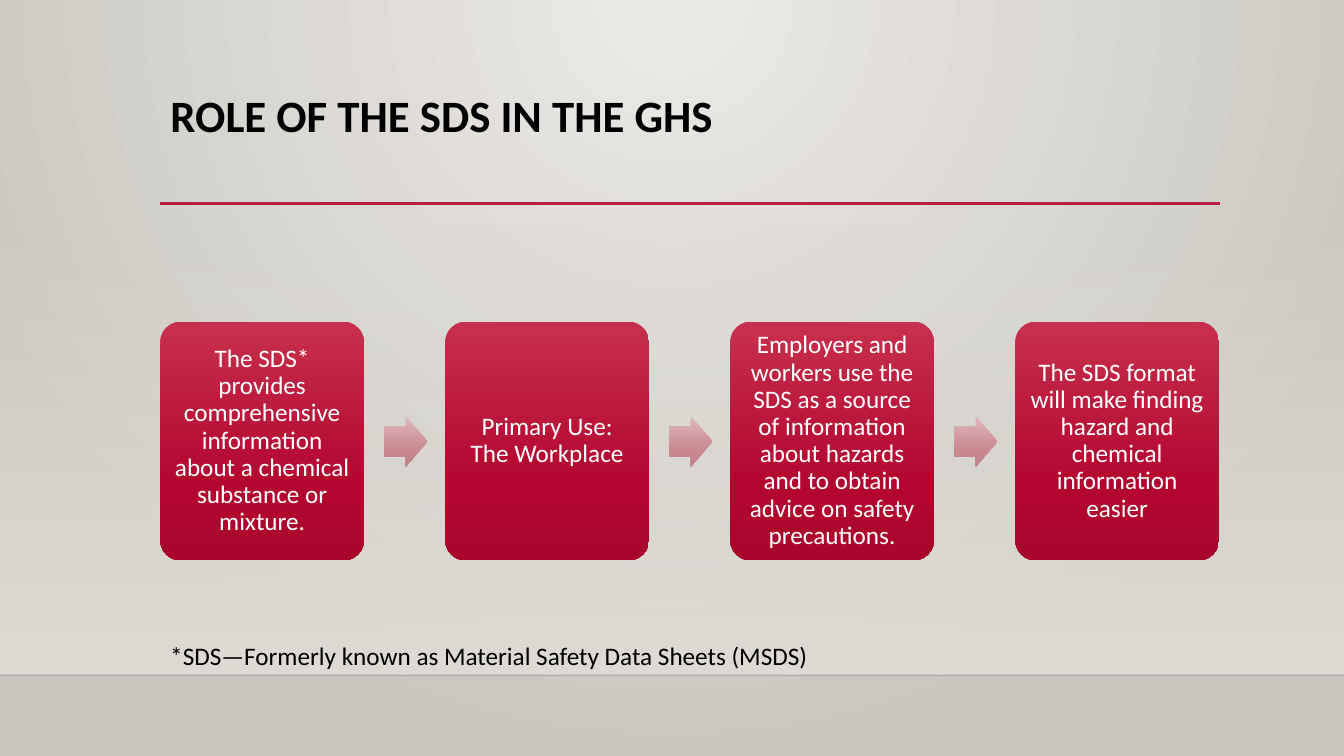
from dataclasses import dataclass
from typing import NamedTuple

from lxml.etree import SubElement
from pptx import Presentation
from pptx.dml.color import RGBColor
from pptx.enum.shapes import MSO_CONNECTOR, MSO_SHAPE
from pptx.enum.text import MSO_ANCHOR, MSO_AUTO_SIZE, PP_ALIGN
from pptx.oxml import parse_xml
from pptx.oxml.ns import nsdecls, qn
from pptx.util import Inches, Pt


class Stop(NamedTuple):
    pos: int
    color: str
    alpha: int = 100


class Box(NamedTuple):
    left: float
    top: float
    width: float
    height: float

    def lengths(self) -> list:
        return [Inches(side) for side in self]


class Rule(NamedTuple):
    left: float
    right: float
    top: float
    color: str
    weight: float
    alpha: int = 100


class Step(NamedTuple):
    lines: tuple


@dataclass(frozen=True)
class Theme:
    font: str = "Calibri"
    head: int = 32
    body: int = 18
    ink: str = "000000"
    white: str = "FFFFFF"
    red: str = "B71E42"
    edge: str = "000001"
    wall: tuple = (Stop(0, "ECEAE7"), Stop(100, "CAC7C1"))
    haze: tuple = (Stop(0, "DFDBD5", 0), Stop(100, "DFDBD5"))
    card: tuple = (Stop(0, "C7304C"), Stop(69, "B3062F"), Stop(100, "AA062C"))
    arrow: tuple = (Stop(0, "DFB7BB"), Stop(69, "C9888E"), Stop(100, "BE8288"))


THEME = Theme()
DOWN = '<a:lin ang="5400000" scaled="0"/>'
GLOW = '<a:path path="circle"><a:fillToRect l="43000" r="43000" b="100000"/></a:path>'
WIDE, HIGH = 13.33, 7.5
LEFT, SPAN = 1.59, 10.5
FLOOR = 6.7
CARD = Box(LEFT, 3.19, 2.02, 2.37)
ARROW = Box(LEFT + 2.22, 4.13, 0.43, 0.5)
STEPS = (
    Step(("The SDS* provides comprehensive information about a chemical substance or mixture.",)),
    Step(("Primary Use:", "The Workplace")),
    Step(("Employers and workers use the SDS as a source of information about hazards "
          "and to obtain advice on safety precautions.",)),
    Step(("The SDS format will make finding hazard and chemical information easier",)),
)
RULES = (
    Rule(0, WIDE, FLOOR, THEME.edge, 1, 20),
    Rule(LEFT, 12.1, 2.02, THEME.red, 2.5),
)


def blend(fill, owner, stops: tuple, shade: str) -> None:
    """Give the owner element a gradient fill."""
    fill.solid()
    marks = "".join(
        f'<a:gs pos="{stop.pos * 1000}"><a:srgbClr val="{stop.color}">'
        f'<a:alpha val="{stop.alpha * 1000}"/></a:srgbClr></a:gs>'
        for stop in stops
    )
    solid = owner.find(qn("a:solidFill"))
    owner.replace(solid, parse_xml(
        f'<a:gradFill {nsdecls("a")} rotWithShape="1"><a:gsLst>{marks}</a:gsLst>{shade}</a:gradFill>'
    ))


def add_form(slide, kind, box: Box, stops: tuple, *bends: float):
    form = slide.shapes.add_shape(kind, *box.lengths())
    form.shadow.inherit = False
    form.line.fill.background()
    for index, bend in enumerate(bends):
        form.adjustments[index] = bend
    blend(form.fill, form.element.spPr, stops, DOWN)
    return form


def add_rule(slide, rule: Rule) -> None:
    top = Inches(rule.top)
    line = slide.shapes.add_connector(
        MSO_CONNECTOR.STRAIGHT, Inches(rule.left), top, Inches(rule.right), top)
    line.line.width = Pt(rule.weight)
    line.line.color.rgb = RGBColor.from_string(rule.color)
    if rule.alpha < 100:
        color = line.element.spPr.find(".//" + qn("a:srgbClr"))
        SubElement(color, qn("a:alpha"), val=str(rule.alpha * 1000))
    SubElement(line.element.spPr, qn("a:effectLst"))


def add_text(frame, lines: tuple, size: int, color: str, align=PP_ALIGN.LEFT,
             space: float = 1.0, bold: bool = False) -> None:
    frame.word_wrap = True
    para = frame.paragraphs[0]
    para.alignment = align
    para.line_spacing = space
    for index, line in enumerate(lines):
        if index:
            para.add_line_break()
        run = para.add_run()
        run.text = line
        run.font.name = THEME.font
        run.font.size = Pt(size)
        run.font.bold = bold
        run.font.color.rgb = RGBColor.from_string(color)


def add_step(slide, step: Step, shift: float) -> None:
    card = add_form(slide, MSO_SHAPE.ROUNDED_RECTANGLE,
                    CARD._replace(left=CARD.left + shift), THEME.card, 0.1)
    frame = card.text_frame
    frame.margin_left = frame.margin_right = Inches(0.07)
    frame.margin_top = frame.margin_bottom = Inches(0.07)
    frame.vertical_anchor = MSO_ANCHOR.MIDDLE
    add_text(frame, step.lines, THEME.body, THEME.white, PP_ALIGN.CENTER, 0.9)


def main() -> None:
    deck = Presentation()
    deck.slide_width, deck.slide_height = Inches(WIDE), Inches(HIGH)
    slide = deck.slides.add_slide(deck.slide_layouts[5])

    # Backdrop and rules
    fill = slide.background.fill
    fill.solid()
    blend(fill, slide.element.find(".//" + qn("p:bgPr")), THEME.wall, GLOW)
    add_form(slide, MSO_SHAPE.RECTANGLE, Box(0, 2.21, WIDE, FLOOR - 2.21), THEME.haze)
    for rule in RULES:
        add_rule(slide, rule)

    # Title
    title = slide.shapes.title
    title.left, title.top, title.width, title.height = Box(LEFT, 0.88, SPAN, 1.15).lengths()
    title.text_frame.vertical_anchor = MSO_ANCHOR.TOP
    title.text_frame.auto_size = MSO_AUTO_SIZE.NONE
    add_text(title.text_frame, ("ROLE OF THE SDS IN THE GHS",), THEME.head, THEME.ink,
             space=0.9, bold=True)

    # Steps with arrows between them
    pitch = (SPAN - CARD.width) / (len(STEPS) - 1)
    for index, step in enumerate(STEPS):
        shift = index * pitch
        add_step(slide, step, shift)
        if index < len(STEPS) - 1:
            add_form(slide, MSO_SHAPE.RIGHT_ARROW,
                     ARROW._replace(left=ARROW.left + shift), THEME.arrow, 0.6, 0.5)

    # Footnote
    note = slide.shapes.add_textbox(*Box(LEFT, 6.3, 6.67, 0.4).lengths())
    add_text(note.text_frame, ("*SDS—Formerly known as Material Safety Data Sheets (MSDS)",),
             THEME.body, THEME.ink)
    note.text_frame.auto_size = MSO_AUTO_SIZE.SHAPE_TO_FIT_TEXT

    deck.save("out.pptx")


if __name__ == "__main__":
    main()
